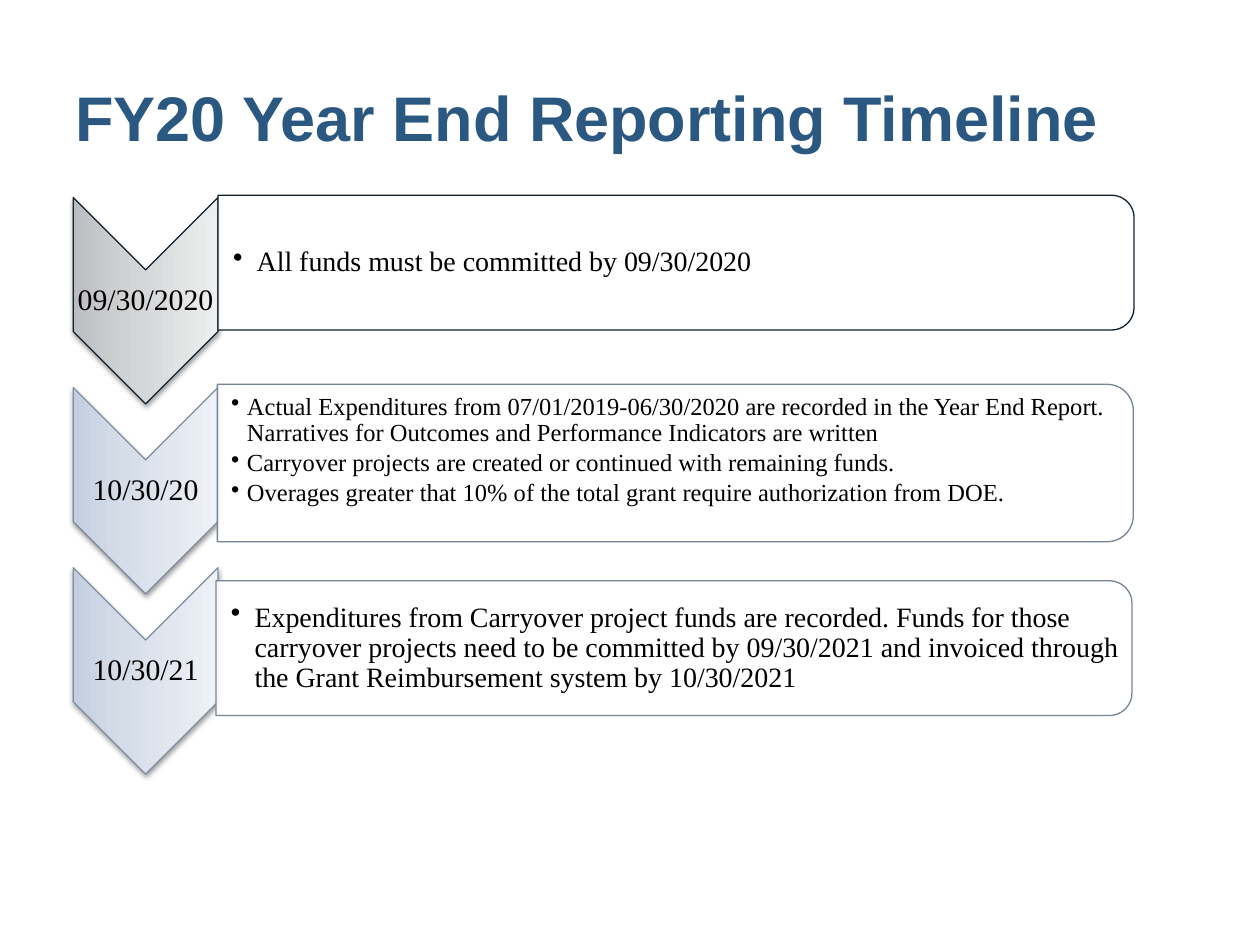
from lxml import etree
from pptx import Presentation
from pptx.dml.color import RGBColor
from pptx.enum.shapes import MSO_SHAPE
from pptx.enum.text import MSO_ANCHOR, PP_ALIGN
from pptx.oxml import parse_xml
from pptx.oxml.ns import nsdecls, qn
from pptx.util import Pt

CHEVRON = MSO_SHAPE.CHEVRON
ROUNDED_PANEL = MSO_SHAPE.ROUND_2_SAME_RECTANGLE
MIDDLE = MSO_ANCHOR.MIDDLE
LEFT, CENTER = PP_ALIGN.LEFT, PP_ALIGN.CENTER

TITLE_BLUE = RGBColor(0x2B, 0x58, 0x80)
BLACK = RGBColor(0, 0, 0)
WHITE = RGBColor(0xFF, 0xFF, 0xFF)
NAVY = RGBColor(0x10, 0x21, 0x2F)
SLATE = RGBColor(0x81, 0x8F, 0xA0)
PANEL_SLATE = RGBColor(0x75, 0x84, 0x97)
GRAYS = [RGBColor(0xBB, 0xBD, 0xC0), RGBColor(0xD0, 0xD1, 0xD3), RGBColor(0xED, 0xEE, 0xEE)]
BLUES = [RGBColor(0xC3, 0xCF, 0xE0), RGBColor(0xD5, 0xDD, 0xE8), RGBColor(0xEE, 0xF2, 0xF7)]
STOPS = [0, 35, 100]

TITLE = "FY20 Year End Reporting Timeline"
STEPS = [
    {"date": "09/30/2020", "top": 112.8, "gradient": GRAYS, "line": NAVY, "panel_line": NAVY,
     "panel": (124.6, 111.6, 77), "size": 16, "indent": 13.5, "inset": 8.6, "bottom": 0.7,
     "bullets": ["All funds must be committed by 09/30/2020"]},
    {"date": "10/30/20", "top": 221.4, "gradient": BLUES, "line": SLATE, "panel_line": PANEL_SLATE,
     "panel": (124.2, 219.6, 90), "size": 14, "indent": 9, "inset": 7.9, "bottom": 15,
     "bullets": ["Actual Expenditures from 07/01/2019-06/30/2020 are recorded in the Year End Report. "
                 "Narratives for Outcomes and Performance Indicators are written",
                 "Carryover projects are created or continued with remaining funds.",
                 "Overages greater that 10% of the total grant require authorization from DOE."]},
    {"date": "10/30/21", "top": 324.4, "gradient": BLUES, "line": SLATE, "panel_line": PANEL_SLATE,
     "panel": (123.4, 331.9, 77), "size": 16, "indent": 13.5, "inset": 8.6, "bottom": 0.7,
     "bullets": ["Expenditures from Carryover project funds are recorded. Funds for those carryover "
                 "projects need to be committed by 09/30/2021 and invoiced through the Grant "
                 "Reimbursement system by 10/30/2021"]},
]

CHEVRON_LEFT, CHEVRON_WIDTH, CHEVRON_HEIGHT = 41.8, 82.8, 118
PANEL_WIDTH, PANEL_TEXT_WIDTH, PANEL_PADDING = 523.4, 519.6, 8
HAIR_INSET = 0.7


def add_turned_shape(slide, kind, left, top, width, height, line_color):
    shift = (width - height) / 2
    shape = slide.shapes.add_shape(kind, Pt(left + shift), Pt(top - shift), Pt(height), Pt(width))
    shape.rotation = 90
    shape.shadow.inherit = False
    shape.line.color.rgb = line_color
    shape.line.width = Pt(0.75)
    return shape


def add_chevron(slide, step):
    shape = add_turned_shape(slide, CHEVRON, CHEVRON_LEFT, step["top"],
                             CHEVRON_WIDTH, CHEVRON_HEIGHT, step["line"])
    stops = "".join(f'<a:gs pos="{position * 1000}"><a:srgbClr val="{color}"/></a:gs>'
                    for position, color in zip(STOPS, step["gradient"]))
    properties = shape._element.spPr
    properties.find(qn("a:prstGeom")).addnext(parse_xml(
        f'<a:gradFill {nsdecls("a")} rotWithShape="1"><a:gsLst>{stops}</a:gsLst>'
        '<a:lin ang="16200000" scaled="1"/></a:gradFill>'))
    properties.find(qn("a:effectLst")).append(parse_xml(
        f'<a:outerShdw {nsdecls("a")} blurRad="{Pt(3.1)}" dist="{Pt(1.6)}" dir="5400000" '
        'rotWithShape="0"><a:srgbClr val="000000"><a:alpha val="38000"/></a:srgbClr></a:outerShdw>'))


def add_panel(slide, step):
    left, top, height = step["panel"]
    shape = add_turned_shape(slide, ROUNDED_PANEL, left, top, PANEL_WIDTH, height, step["panel_line"])
    shape.fill.solid()
    shape.fill.fore_color.rgb = WHITE
    color = shape._element.spPr.find(qn("a:solidFill")).find(qn("a:srgbClr"))
    etree.SubElement(color, qn("a:alpha")).set("val", "90000")


def add_text(slide, box, lines, size, font, color, insets, align=LEFT, bold=False,
             spacing=0.9, indent=0):
    shape = slide.shapes.add_textbox(*map(Pt, box))
    frame = shape.text_frame
    frame.word_wrap = True
    frame.vertical_anchor = MIDDLE
    frame.margin_left, frame.margin_top, frame.margin_right, frame.margin_bottom = map(Pt, insets)
    for index, line in enumerate(lines):
        paragraph = frame.add_paragraph() if index else frame.paragraphs[0]
        paragraph.text = line
        if indent:
            properties = paragraph._p.get_or_add_pPr()
            properties.set("marL", str(Pt(indent)))
            properties.set("indent", str(-Pt(indent)))
            etree.SubElement(properties, qn("a:buChar")).set("char", "•")
            paragraph.space_after = Pt(size * 0.15)
        paragraph.alignment = align
        paragraph.line_spacing = spacing
        paragraph.font.size = Pt(size)
        paragraph.font.name = font
        paragraph.font.bold = bold
        paragraph.font.color.rgb = color


def add_step(slide, step):
    add_chevron(slide, step)
    label_box = (CHEVRON_LEFT, step["top"] + CHEVRON_WIDTH / 2, CHEVRON_WIDTH,
                 CHEVRON_HEIGHT - CHEVRON_WIDTH)
    add_text(slide, label_box, [step["date"]], 17, "Times New Roman", BLACK,
             [HAIR_INSET] * 4, align=CENTER)
    add_panel(slide, step)
    left, top, height = step["panel"]
    text_box = (left, top + PANEL_PADDING / 2, PANEL_TEXT_WIDTH, height - PANEL_PADDING)
    add_text(slide, text_box, step["bullets"], step["size"], "Times New Roman", BLACK,
             (step["inset"], HAIR_INSET, HAIR_INSET, step["bottom"]), indent=step["indent"])


def main():
    presentation = Presentation()
    presentation.slide_width, presentation.slide_height = Pt(720), Pt(540)
    slide = presentation.slides.add_slide(presentation.slide_layouts[6])
    add_text(slide, (36, 21.6, 648, 90), [TITLE], 36, "Arial", TITLE_BLUE,
             (7.2, 3.6, 7.2, 3.6), bold=True, spacing=1.0)
    for step in STEPS:
        add_step(slide, step)
    presentation.save("out.pptx")


if __name__ == "__main__":
    main()
